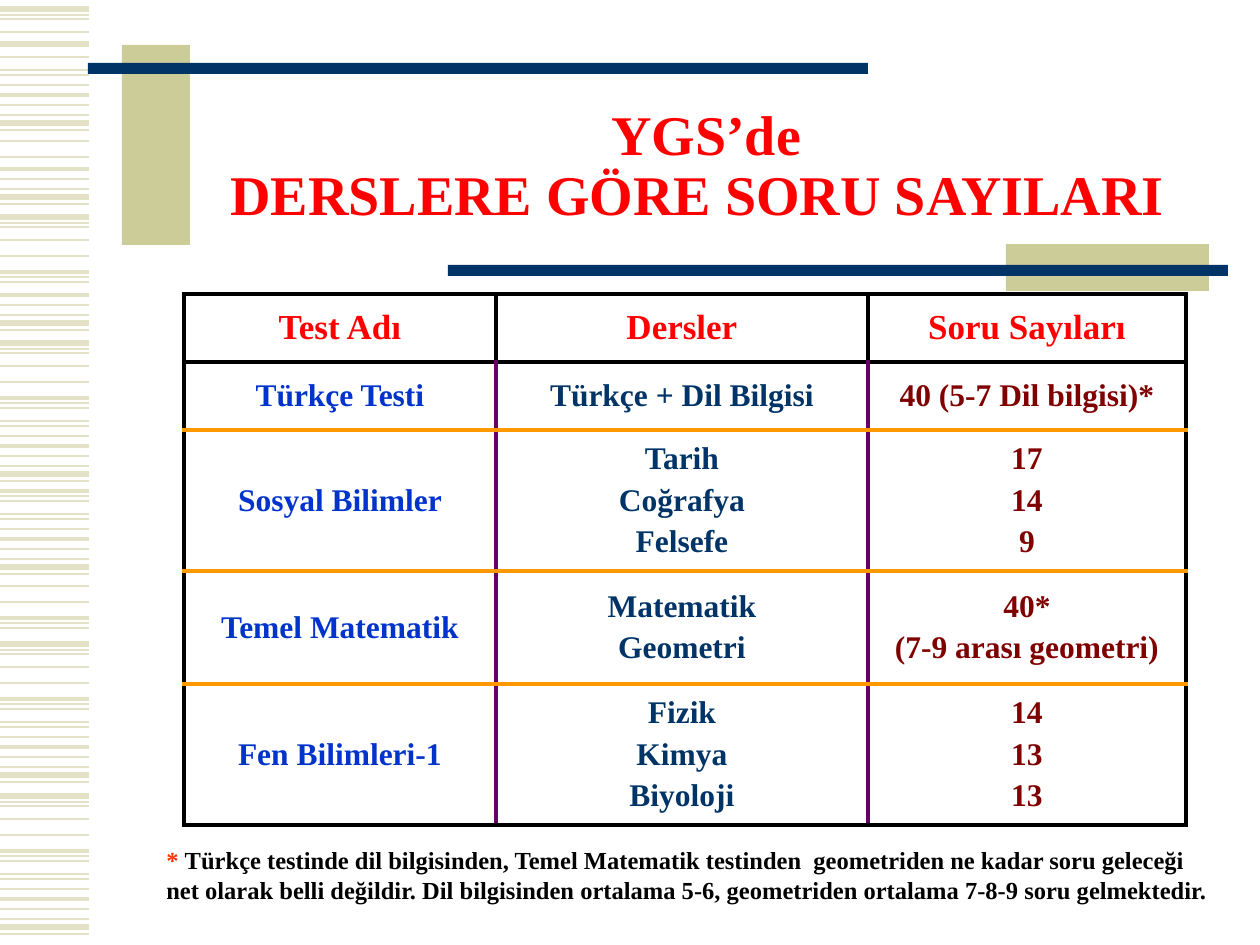
from lxml.etree import SubElement
from pptx import Presentation
from pptx.dml.color import RGBColor
from pptx.enum.shapes import MSO_CONNECTOR, MSO_SHAPE
from pptx.enum.text import MSO_ANCHOR as ANCHOR, PP_ALIGN as ALIGN
from pptx.oxml.ns import qn
from pptx.util import Pt

PX = 914400 / 126
FONT = "Times New Roman"
STRIPE = RGBColor(0xE3, 0xE2, 0xC7)
KHAKI = RGBColor(0xCC, 0xCC, 0x99)
NAVY = RGBColor(0x00, 0x33, 0x66)
RED = RGBColor(0xFF, 0x00, 0x00)
ORANGE_RED = RGBColor(0xFF, 0x33, 0x00)
BLUE = RGBColor(0x00, 0x33, 0xCC)
MAROON = RGBColor(0x80, 0x00, 0x00)
PURPLE = RGBColor(0x66, 0x00, 0x66)
ORANGE = RGBColor(0xFF, 0x99, 0x00)
BLACK = RGBColor(0x00, 0x00, 0x00)


def px(*lengths):
    return [round(length * PX) for length in lengths]


def add_text(paragraph, text, size=18, color=BLACK, bold=True, align=None):
    run = paragraph.add_run()
    run.text = text
    run.font.name = FONT
    run.font.size = Pt(size)
    run.font.bold = bold
    run.font.color.rgb = color
    if align is not None:
        paragraph.alignment = align


presentation = Presentation()
presentation.slide_width, presentation.slide_height = px(1260, 945)
slide = presentation.slides.add_slide(presentation.slide_layouts[5])
shapes = slide.shapes

# Stripes on the left: pieces of one pattern of (offset, weight)
PATTERN = [(0, 3), (6, 0.75), (10, 1), (23, 1), (39, 1), (55, 2.25), (60, 0.75), (65, 1.5),
           (78, 0.75), (83, 1.5), (93, 1), (103, 2.25), (113, 1.5), (123, 0.75), (131, 3), (138, 1.5)]
PIECES = [(9, 0, 4), (44, 0, 1), (-8, 7, 16), (118, 3, 5), (66, 11, 16), (217, 0, 8), (192, 11, 16),
          (343, 0, 16), (436, 5, 16), (563, 3, 8), (644, 0, 16), (796, 0, 16)]
for base, first, last in PIECES:
    for offset, weight in PATTERN[first:last]:
        y = base + offset
        stripe = shapes.add_connector(MSO_CONNECTOR.STRAIGHT, *px(0, y, 89, y))
        stripe.line.color.rgb = STRIPE
        stripe.line.width = Pt(weight)
        SubElement(stripe._element.spPr, qn("a:effectLst"))

# Blocks and bars around the title
for left, top, width, height, color in [
    (122, 45, 68, 200, KHAKI),
    (88, 63, 780, 11, NAVY),
    (1006, 244, 203, 47, KHAKI),
    (448, 265, 780, 11, NAVY),
]:
    bar = shapes.add_shape(MSO_SHAPE.RECTANGLE, *px(left, top, width, height))
    bar.shadow.inherit = False
    bar.fill.solid()
    bar.fill.fore_color.rgb = color
    bar.line.fill.background()

# Title
title = shapes.title
title.left, title.top, title.width, title.height = px(189, 84, 1017, 158)
title.text_frame.vertical_anchor = ANCHOR.MIDDLE
paragraph = title.text_frame.paragraphs[0]
paragraph.line_spacing = 0.85
add_text(paragraph, " ", size=40, color=NAVY, bold=False, align=ALIGN.CENTER)
add_text(paragraph, "YGS’de", size=32, color=RED)
paragraph.add_line_break()
add_text(paragraph, "DERSLERE GÖRE SORU SAYILARI", size=32, color=RED)

# Table of tests, lessons and question counts
ROWS = [
    (68, "Test Adı", "Dersler", "Soru Sayıları"),
    (68, "Türkçe Testi", "Türkçe + Dil Bilgisi", "40 (5-7 Dil bilgisi)*"),
    (141, "Sosyal Bilimler", "Tarih\nCoğrafya\nFelsefe", "17\n14\n9"),
    (113, "Temel Matematik", "Matematik\nGeometri", "40*\n(7-9 arası geometri)"),
    (141, "Fen Bilimleri-1", "Fizik\nKimya\nBiyoloji", "14\n13\n13"),
]
COLUMN_WIDTHS = [312, 372, 318]
COLUMN_COLORS = [BLUE, NAVY, MAROON]
last_row, last_column = len(ROWS) - 1, len(COLUMN_WIDTHS) - 1
table = shapes.add_table(len(ROWS), len(COLUMN_WIDTHS), *px(184, 294, 1002, 531)).table
table.first_row = table.horz_banding = False
for column, width in zip(table.columns, COLUMN_WIDTHS):
    column.width = px(width)[0]

for r, (height, *texts) in enumerate(ROWS):
    table.rows[r].height = px(height)[0]
    for c, text in enumerate(texts):
        cell = table.cell(r, c)
        cell.vertical_anchor = ANCHOR.MIDDLE
        for i, line in enumerate(text.split("\n")):
            frame = cell.text_frame
            paragraph = frame.add_paragraph() if i else frame.paragraphs[0]
            paragraph.space_before = Pt(3.6)
            add_text(paragraph, line, size=18 if r else 20,
                     color=COLUMN_COLORS[c] if r else RED, align=ALIGN.CENTER)

        # Black frame and header, purple columns, orange rows
        borders = {
            "a:lnL": PURPLE if r and c else BLACK,
            "a:lnR": PURPLE if r and c < last_column else BLACK,
            "a:lnT": ORANGE if r > 1 else BLACK,
            "a:lnB": ORANGE if 0 < r < last_row else BLACK,
        }
        properties = cell._tc.get_or_add_tcPr()
        for tag, color in borders.items():
            border = SubElement(properties, qn(tag), w=str(Pt(3)))
            fill = SubElement(border, qn("a:solidFill"))
            SubElement(fill, qn("a:srgbClr"), val=str(color))
        cell.fill.background()

# Footnote
footnote = shapes.add_textbox(*px(154, 839, 1072, 72)).text_frame
footnote.word_wrap = True
paragraph = footnote.paragraphs[0]
add_text(paragraph, "* ", size=14, color=ORANGE_RED)
add_text(paragraph, "Türkçe testinde dil bilgisinden, Temel Matematik testinden  geometriden ne kadar "
         "soru geleceği net olarak belli değildir. Dil bilgisinden ortalama 5-6, geometriden "
         "ortalama 7-8-9 soru gelmektedir.", size=14)

presentation.save("out.pptx")
